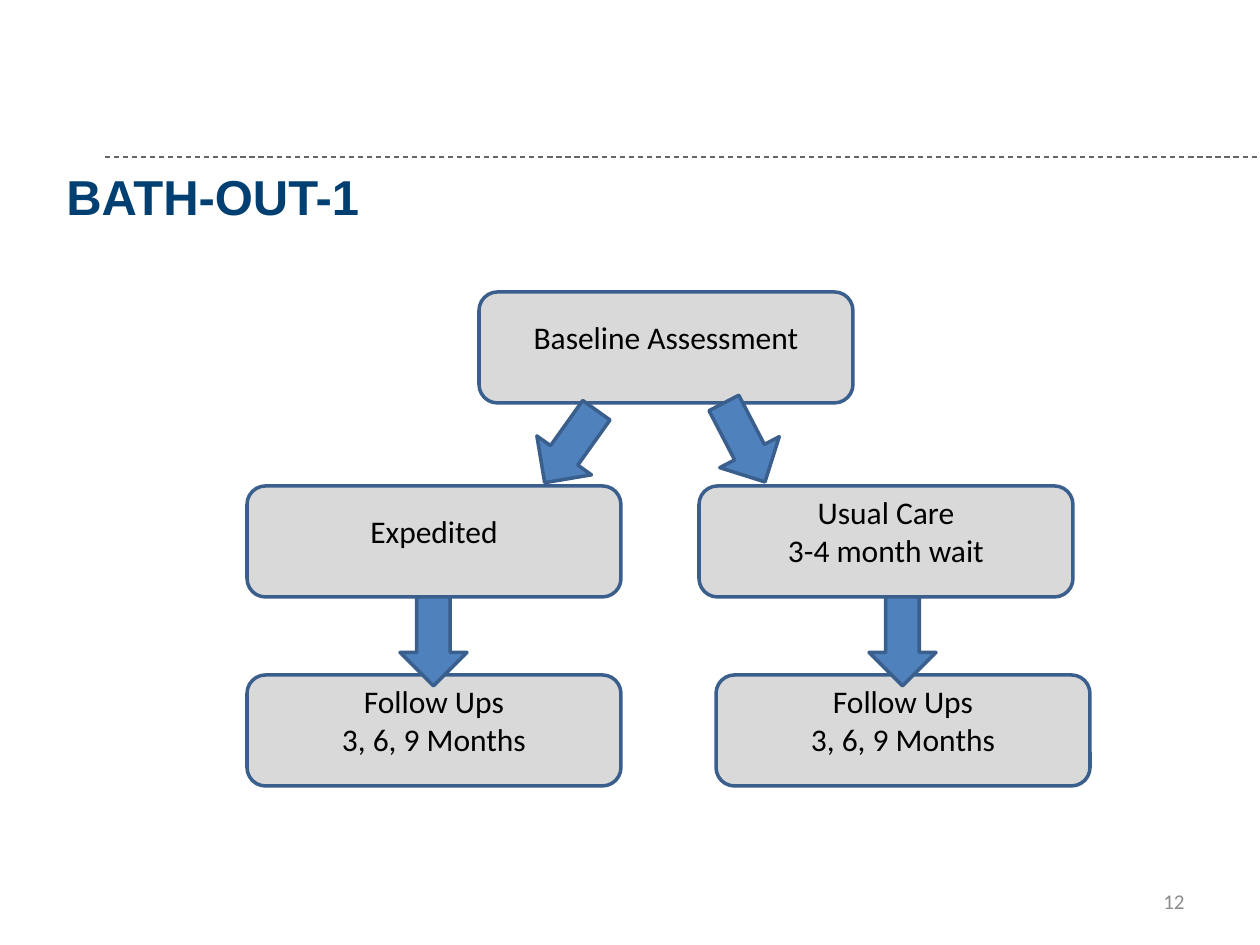
from lxml.etree import SubElement
from pptx import Presentation
from pptx.dml.color import RGBColor
from pptx.enum.dml import MSO_LINE
from pptx.enum.shapes import MSO_CONNECTOR, MSO_SHAPE as SHAPE
from pptx.enum.text import MSO_ANCHOR as ANCHOR, PP_ALIGN as ALIGN
from pptx.oxml.ns import qn
from pptx.util import Emu, Pt

NAVY = RGBColor(0x00, 0x3F, 0x72)
BLUE = RGBColor(0x4F, 0x81, 0xBD)
EDGE = RGBColor(0x3A, 0x5F, 0x8C)
PANEL = RGBColor(0xD9, 0xD9, 0xD9)
RULE = RGBColor(0x66, 0x66, 0x66)
MUTED = RGBColor(0x8C, 0x8C, 0x8C)
BLACK = RGBColor(0x00, 0x00, 0x00)

PX_PER_INCH = 126
BOX_W, BOX_H = 374, 111
ARROW_W, ARROW_H = 67, 89


def px(n):
    return Emu(round(n * 914400 / PX_PER_INCH))


def write(tf, lines, size, color, font="Calibri", align=ALIGN.CENTER, bold=False):
    tf.word_wrap = True
    tf.vertical_anchor = ANCHOR.MIDDLE
    for i, line in enumerate(lines):
        p = tf.paragraphs[0] if i == 0 else tf.add_paragraph()
        p.text = line
        p.alignment = align
        p.font.name = font
        p.font.size = Pt(size)
        p.font.bold = bold
        p.font.color.rgb = color


def add_outlined(slide, kind, x, y, w, h, fill):
    sp = slide.shapes.add_shape(kind, px(x), px(y), px(w), px(h))
    sp.shadow.inherit = False
    sp.fill.solid()
    sp.fill.fore_color.rgb = fill
    sp.line.color.rgb = EDGE
    sp.line.width = Pt(2)
    return sp


def add_step(slide, x, y, *lines):
    sp = add_outlined(slide, SHAPE.ROUNDED_RECTANGLE, x, y, BOX_W, BOX_H, PANEL)
    sp.text_frame.margin_bottom = px(27)
    write(sp.text_frame, lines, 18, BLACK)


def add_arrow(slide, x, y, rotation=0):
    sp = add_outlined(slide, SHAPE.DOWN_ARROW, x, y, ARROW_W, ARROW_H, BLUE)
    sp.rotation = rotation


def add_header(slide, x, y, w, h):
    line = slide.shapes.add_connector(
        MSO_CONNECTOR.STRAIGHT, px(x + 51), px(y), px(1260), px(y))
    line.line.color.rgb = RULE
    line.line.width = Pt(0.75)
    line.line.dash_style = MSO_LINE.DASH
    SubElement(line._element.spPr, qn("a:effectLst"))
    title = slide.shapes.add_textbox(px(x), px(y), px(w), px(h))
    write(title.text_frame, ["BATH-OUT-1"], 28, NAVY, "Arial", ALIGN.LEFT, True)


def add_flow(slide, x, y):
    middle, bottom = y + 194, y + 383
    follow_ups = ("Follow Ups", "3, 6, 9 Months")
    add_step(slide, x + 232, y, "Baseline Assessment")
    add_step(slide, x, middle, "Expedited")
    add_step(slide, x + 452, middle, "Usual Care", "3-4 month wait")
    for left in (x, x + 469):
        add_step(slide, left, bottom, *follow_ups)
    for left in (x, x + 469):
        add_arrow(slide, left + (BOX_W - ARROW_W) // 2, middle + BOX_H)
    add_arrow(slide, x + 290, y + 110, 35.5)
    add_arrow(slide, x + 464, y + 106, 332.5)


def add_page_number(slide, x, y, w, h):
    sp = slide.shapes.add_textbox(px(x), px(y), px(w), px(h))
    write(sp.text_frame, ["12"], 12, MUTED, align=ALIGN.RIGHT)


def main():
    prs = Presentation()
    prs.slide_width, prs.slide_height = px(1260), px(945)
    slide = prs.slides.add_slide(prs.slide_layouts[6])
    add_header(slide, 54, 157, 1134, 77)
    add_page_number(slide, 903, 876, 294, 50)
    add_flow(slide, 247, 292)
    prs.save("out.pptx")


if __name__ == "__main__":
    main()
